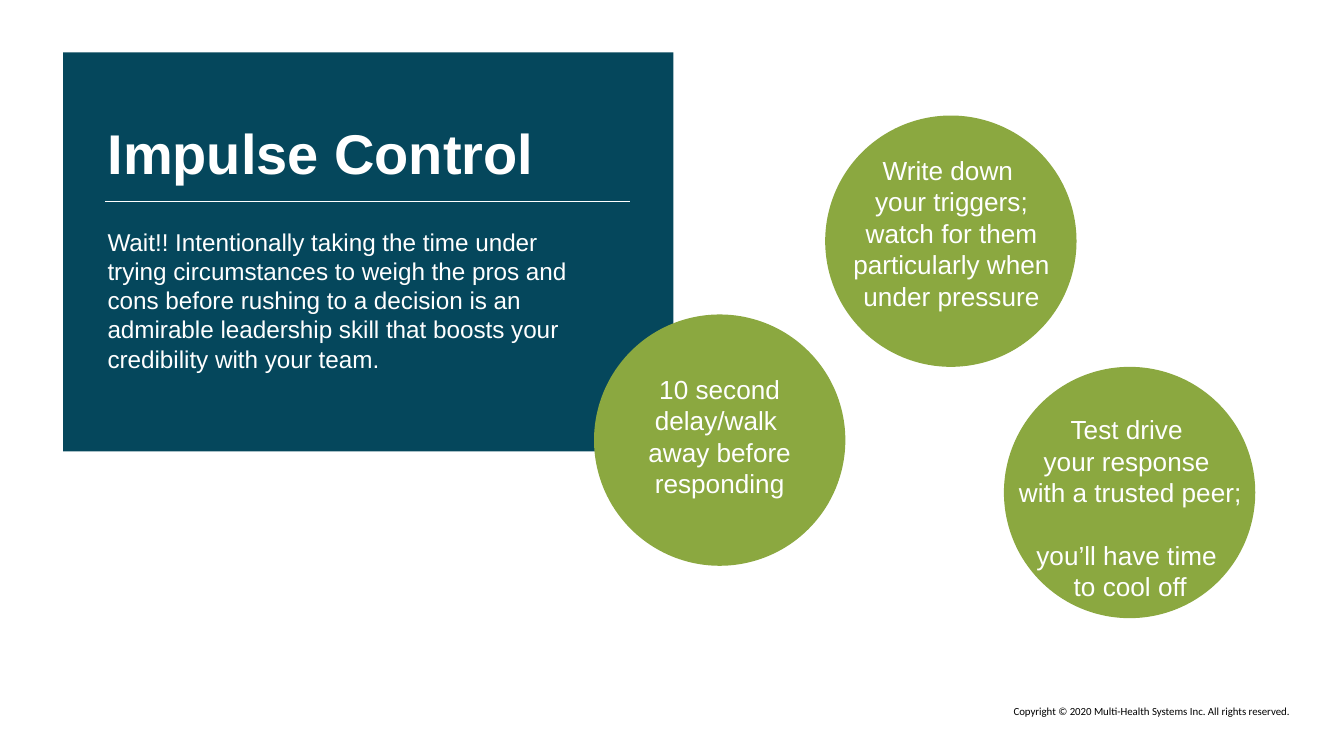
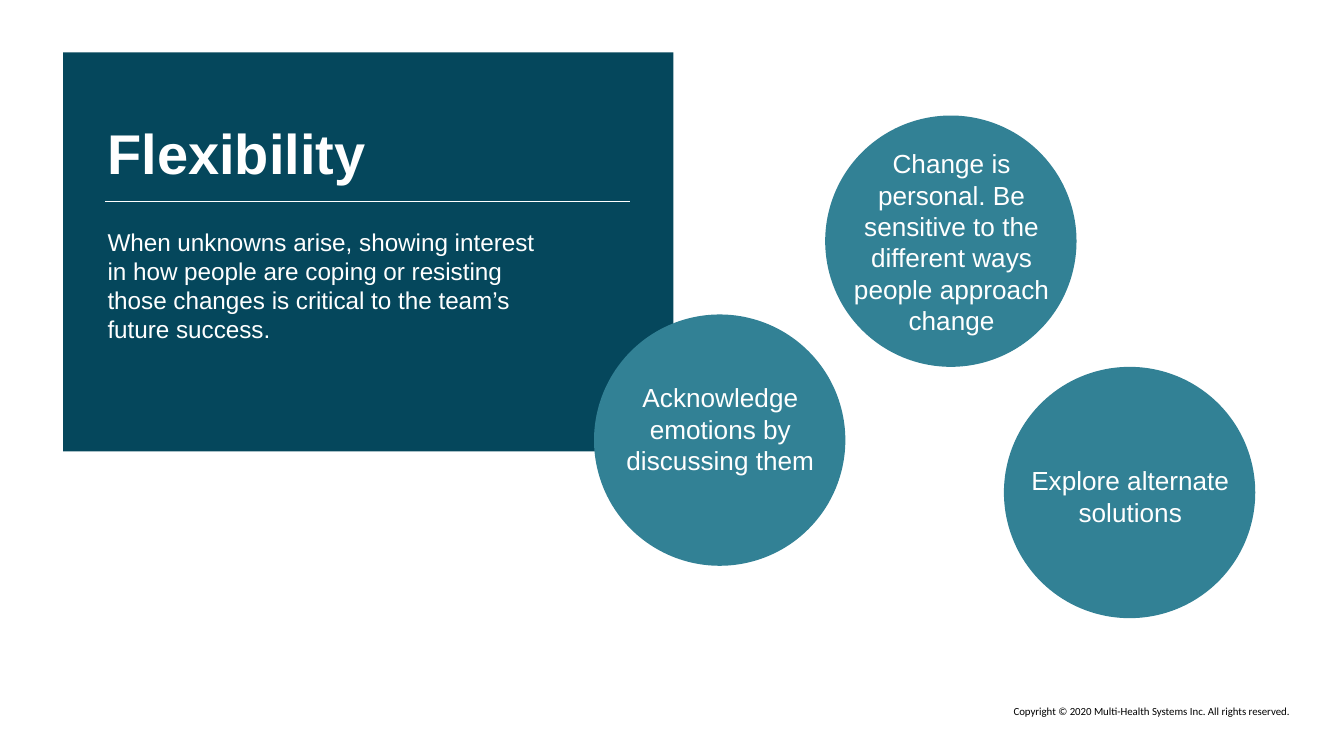
import pptx
import pptx.dml.color
import pptx.enum.shapes
import pptx.enum.text
import pptx.util
from lxml import etree
from pptx.util import Inches

NAVY, GREEN, TEAL = "05475C", "8BA840", "328195"
WHITE, BLACK = "FFFFFF", "000000"
FOOTER = "Copyright © 2020 Multi-Health Systems Inc. All rights reserved."
SPOTS = [(6.14, 0.86), (4.42, 2.34), (7.47, 2.73)]
SIZE = 1.87
A = "{http://schemas.openxmlformats.org/drawingml/2006/main}"
ALIGN = pptx.enum.text.PP_ALIGN
ANCHOR = pptx.enum.text.MSO_ANCHOR
FIT = pptx.enum.text.MSO_AUTO_SIZE
KIND = pptx.enum.shapes.MSO_SHAPE

# Each tip: left, top, width, height, text
PAGES = [
    {
        "title": "Impulse Control",
        "body": "Wait!! Intentionally taking the time under trying circumstances "
                "to weigh the pros and cons before rushing to a decision is an "
                "admirable leadership skill that boosts your credibility with "
                "your team.",
        "width": 3.67,
        "fill": GREEN,
        "tips": [
            (7.47, 3.03, 1.88, 1.28, "Test drive \nyour response \nwith a trusted peer; "
                                     "\nyou’ll have time \nto cool off"),
            (4.42, 2.73, 1.87, 1.04, "10 second delay/walk \naway before responding"),
            (6.22, 1.1, 1.72, 1.28, "Write down \nyour triggers; watch for them "
                                    "particularly when under pressure"),
        ],
    },
    {
        "title": "Flexibility",
        "body": "When unknowns arise, showing interest in how people are coping "
                "or resisting those changes is critical to the team’s future "
                "success.",
        "width": 3.44,
        "fill": TEAL,
        "tips": [
            (7.47, 3.41, 1.88, 0.57, "Explore alternate solutions"),
            (4.42, 2.79, 1.88, 0.81, "Acknowledge emotions by discussing them"),
            (6.22, 1.05, 1.72, 1.51, "Change is personal. Be sensitive to the "
                                     "different ways people approach change"),
        ],
    },
]


def paint(target, color):
    """Give a fill or a font a solid colour from a hex string."""
    if hasattr(target, "solid"):
        target.solid()
        target = target.fore_color
    else:
        target = target.color
    target.rgb = pptx.dml.color.RGBColor.from_string(color)


def write(shape, box, text, size, color=WHITE, face="Arial", align=ALIGN.LEFT,
          anchor=ANCHOR.TOP, fit=FIT.NONE, bold=False):
    """Place a text shape and set its single paragraph."""
    shape.left, shape.top, shape.width, shape.height = map(Inches, box)
    frame = shape.text_frame
    frame.word_wrap = True
    frame.auto_size = fit
    frame.vertical_anchor = anchor
    line = frame.paragraphs[0]
    line.text = text
    line.alignment = align
    line.space_before = pptx.util.Pt(0)
    if shape.is_placeholder:
        props = line._p.get_or_add_pPr()
        props.set("marL", "0")
        props.set("indent", "0")
        etree.SubElement(props, A + "buNone")
    font = line.font
    font.name, font.size, font.bold = face, pptx.util.Pt(size), bold
    paint(font, color)
    return line


deck = pptx.Presentation()
deck.slide_width = Inches(10)
deck.slide_height = deck.slide_width * 9 // 16

for page in PAGES:
    slide = deck.slides.add_slide(deck.slide_layouts[1])
    shapes = slide.shapes

    panel = shapes.add_shape(KIND.RECTANGLE, Inches(0.47), Inches(0.39),
                             Inches(4.54), Inches(2.97))
    panel.shadow.inherit = False
    paint(panel.fill, NAVY)
    panel.line.fill.background()
    shapes.element.insert(2, panel.element)  # behind the placeholders

    note = shapes.add_textbox(0, 0, 0, 0)
    line = write(note, (7.03, 5.18, 2.66, 0.21), FOOTER, 10, BLACK, "Calibri",
                 ALIGN.RIGHT, fit=FIT.SHAPE_TO_FIT_TEXT)
    line.runs[0]._r.get_or_add_rPr().set("baseline", "30000")

    rule = shapes.add_connector(pptx.enum.shapes.MSO_CONNECTOR.STRAIGHT,
                                Inches(0.78), Inches(1.5), Inches(4.69), Inches(1.5))
    paint(rule.line.fill, WHITE)
    rule.line.width = pptx.util.Pt(0.75)
    etree.SubElement(rule.element.spPr, A + "effectLst")

    write(shapes.title, (0.7, 0.78, 4.06, 0.7), page["title"], 30,
          anchor=ANCHOR.MIDDLE, bold=True)
    write(slide.placeholders[1], (0.7, 1.64, page["width"], 1.64), page["body"], 13)

    for left, top in SPOTS:
        disc = shapes.add_shape(KIND.OVAL, Inches(left), Inches(top),
                                Inches(SIZE), Inches(SIZE))
        disc.shadow.inherit = False
        paint(disc.fill, page["fill"])
        disc.line.fill.background()

    for *box, text in page["tips"]:
        write(shapes.add_textbox(0, 0, 0, 0), box, text, 14, align=ALIGN.CENTER,
              fit=FIT.SHAPE_TO_FIT_TEXT)

deck.save("out.pptx")
